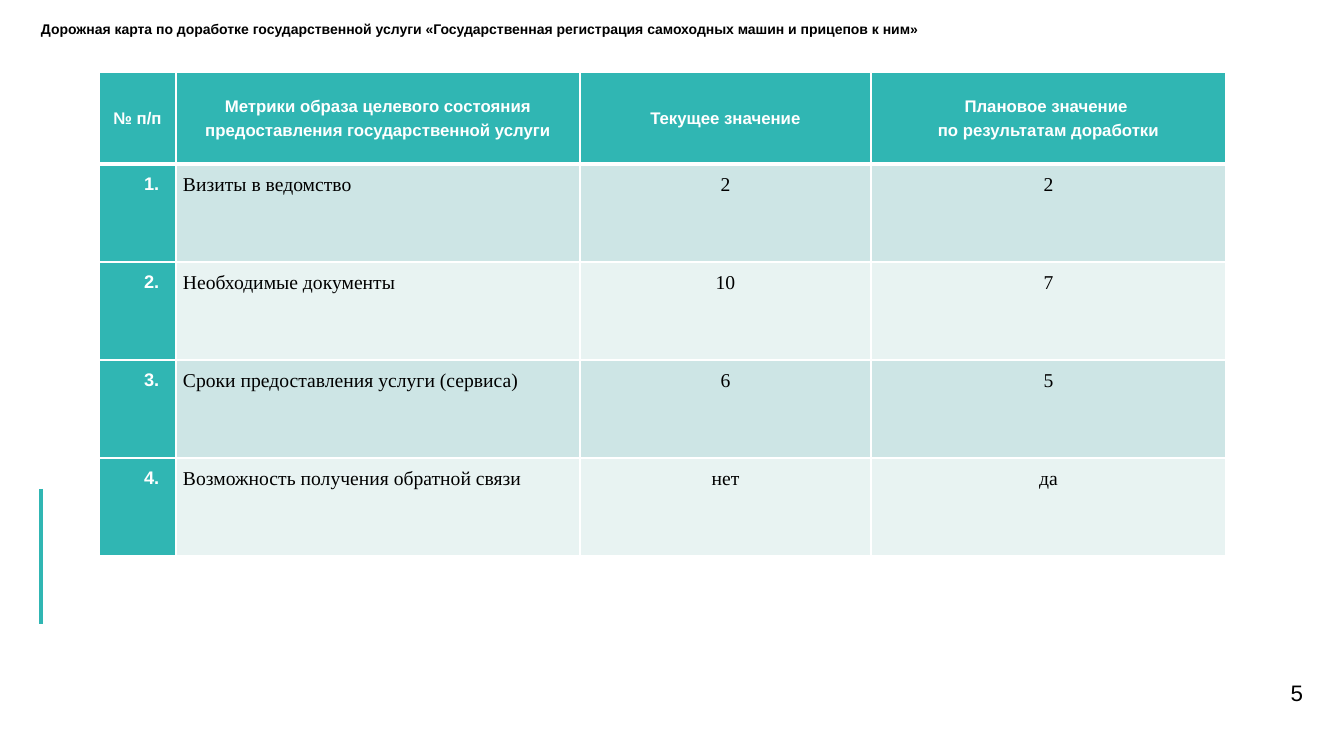
from lxml import etree
from pptx import Presentation, util as u
from pptx.dml.color import RGBColor
from pptx.enum import shapes, text
from pptx.oxml.ns import qn

# Content
TITLE = ("Дорожная карта по доработке государственной услуги "
         "«Государственная регистрация самоходных машин и прицепов к ним»")
PAGE = "5"
HEADS = ["№ п/п",
         "Метрики образа целевого состояния предоставления государственной услуги",
         "Текущее значение",
         "Плановое значение \vпо результатам доработки"]
ROWS = [("Визиты в ведомство", "2", "2"),
        ("Необходимые документы", "10", "7"),
        ("Сроки предоставления услуги (сервиса)", "6", "5"),
        ("Возможность получения обратной связи", "нет", "да")]

# Layout in px
WIDE, HIGH = 1344, 756
TITLE_BOX = (41, 22, 1114, 39)
PAGE_BOX = (1196, 671, 107, 43)
BAR = (41, 489, 41, 624)
LEFT, TOP = 99, 72
COLS = [77, 404, 291, 355]
HEAD_H, ROW_H = 92, 98
PADS = dict(margin_left=7, margin_top=4, margin_right=7, margin_bottom=8)
INDENT = 38

# Colours and fonts
TEAL = RGBColor(0x30, 0xB6, 0xB3)
BANDS = [RGBColor(0xCD, 0xE5, 0xE5), RGBColor(0xE8, 0xF3, 0xF2)]
WHITE = RGBColor(0xFF, 0xFF, 0xFF)
BLACK = RGBColor(0, 0, 0)
HEAD = dict(name="Arial", size=u.Pt(12), bold=True, color=WHITE)
NUM = dict(HEAD, size=u.Pt(13))
BODY = dict(name="Times New Roman", size=u.Pt(14), bold=False, color=BLACK)
CAPTION = dict(name="Arial", size=u.Pt(10), bold=True, color=BLACK)
FOLIO = dict(name="Arial", size=u.Pt(16), bold=False, color=BLACK)
ALIGN = text.PP_ALIGN
ANCHOR = text.MSO_ANCHOR


def px(n):
    return round(n * 914400 / 100.8)


def write(frame, words, style, align, spacing=1.0):
    frame.text = words
    para = frame.paragraphs[0]
    para.alignment, para.line_spacing = align, spacing
    for run in para.runs:
        for key, val in style.items():
            if key == "color":
                run.font.color.rgb = val
            else:
                setattr(run.font, key, val)
    return para


def setup(box, place, anchor):
    for key, val in zip(("left", "top", "width", "height"), place):
        setattr(box, key, px(val))
    frame = box.text_frame
    form = dict.fromkeys(PADS, 0)
    form.update(word_wrap=True, auto_size=text.MSO_AUTO_SIZE.NONE,
                vertical_anchor=anchor)
    for key, val in form.items():
        setattr(frame, key, val)
    return frame


def border(cell, widths):
    props = cell._tc.get_or_add_tcPr()
    for side, width in widths.items():
        line = etree.SubElement(props, qn("a:ln" + side), w=str(u.Pt(width)))
        fill = etree.SubElement(line, qn("a:solidFill"))
        etree.SubElement(fill, qn("a:srgbClr"), val=str(WHITE))


def main():
    prs = Presentation()
    prs.slide_width, prs.slide_height = px(WIDE), px(HIGH)
    slide = prs.slides.add_slide(prs.slide_layouts[5])

    # Title and page number
    frame = setup(slide.shapes.title, TITLE_BOX, ANCHOR.TOP)
    write(frame, TITLE, CAPTION, ALIGN.LEFT, 0.9)
    box = slide.shapes.add_textbox(0, 0, 0, 0)
    write(setup(box, PAGE_BOX, ANCHOR.MIDDLE), PAGE, FOLIO, ALIGN.RIGHT)

    # Accent bar
    bar = slide.shapes.add_connector(shapes.MSO_CONNECTOR.STRAIGHT, *map(px, BAR))
    bar.line.color.rgb, bar.line.width = TEAL, u.Pt(2.25)
    etree.SubElement(bar._element.spPr, qn("a:effectLst"))

    # Table
    grid = [HEADS] + [(f"{n}.", *row) for n, row in enumerate(ROWS, 1)]
    high = [HEAD_H] + [ROW_H] * len(ROWS)
    table = slide.shapes.add_table(len(grid), len(COLS), px(LEFT), px(TOP),
                                   px(sum(COLS)), px(sum(high))).table
    table.first_col = True
    for col, width in zip(table.columns, COLS):
        col.width = px(width)
    for r, row in enumerate(grid):
        table.rows[r].height = px(high[r])
        for c, words in enumerate(row):
            cell = table.cell(r, c)
            for key, val in PADS.items():
                setattr(cell, key, px(val))
            cell.vertical_anchor = ANCHOR.TOP if r else ANCHOR.MIDDLE
            border(cell, dict(L=1, R=1, T=3 if r == 1 else 1, B=1 if r else 3))
            cell.fill.solid()
            cell.fill.fore_color.rgb = BANDS[(r - 1) % 2] if r and c else TEAL
            style = BODY if r and c else NUM if r else HEAD
            align = ALIGN.JUSTIFY if r and c < 2 else ALIGN.CENTER
            para = write(cell.text_frame, words, style, align, 1.3)
            if r and c == 0:
                para._p.get_or_add_pPr().set("marL", str(px(INDENT)))

    prs.save("out.pptx")


if __name__ == "__main__":
    main()
